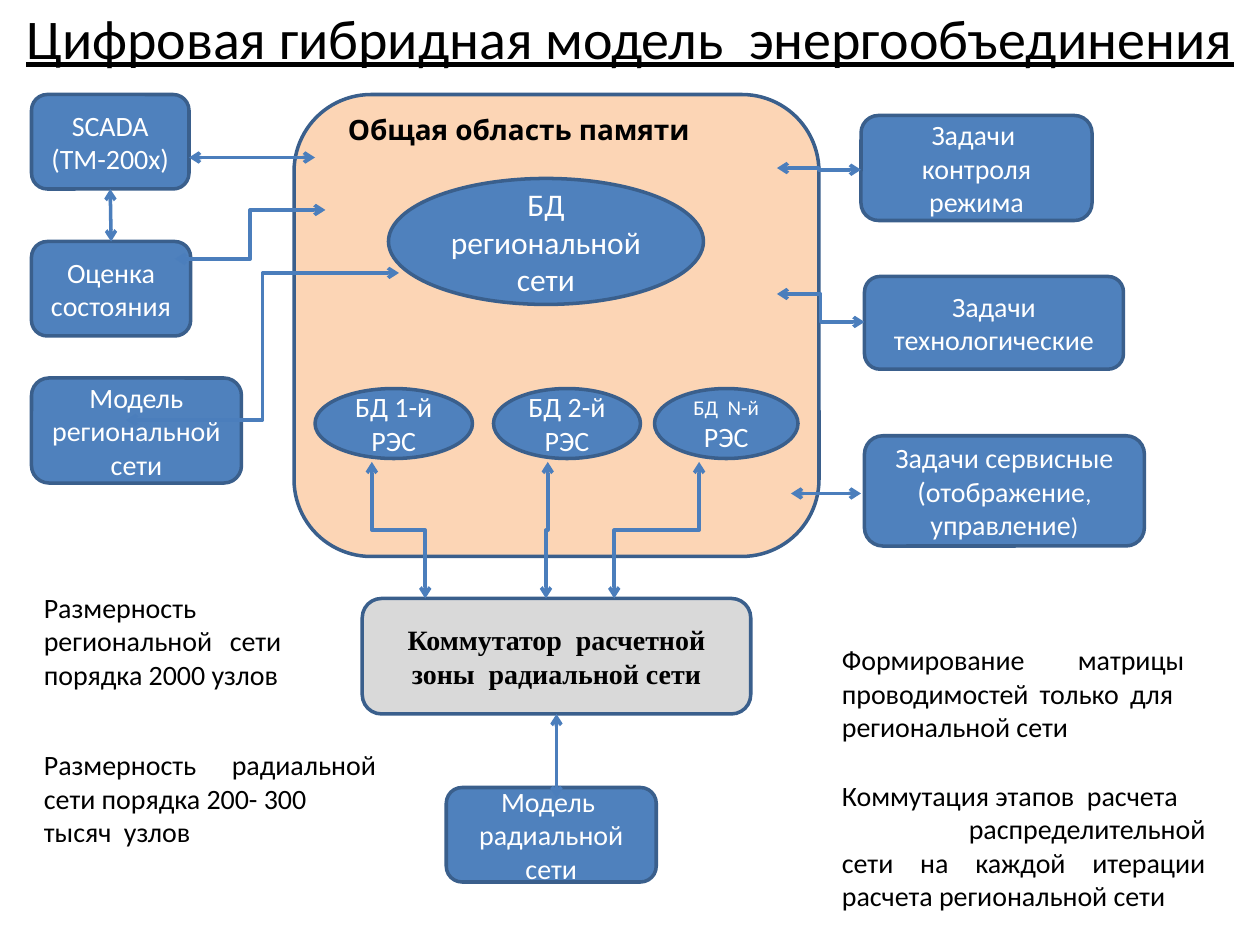
from lxml import etree
from pptx import Presentation
from pptx.dml.color import RGBColor
from pptx.enum.shapes import MSO_CONNECTOR as CONN, MSO_SHAPE as SHAPE
from pptx.enum.text import MSO_ANCHOR as ANCHOR, PP_ALIGN as ALIGN
from pptx.oxml.ns import qn
from pptx.util import Pt

COLORS = {
    "box": "4F81BD",
    "edge": "3A5F8C",
    "arrow": "4B7EBC",
    "memory": "FCD5B5",
    "switch": "D9D9D9",
    "light": "FFFFFF",
    "dark": "000000",
}


def rgb(name):
    return RGBColor.from_string(COLORS[name])


def write(sp, *paragraphs, size=16, font="Calibri", color="dark", bold=False,
          underline=False, aligns=(ALIGN.CENTER,), anchor=ANCHOR.MIDDLE, inset=7.2):
    tf = sp.text_frame
    tf.word_wrap = True
    tf.vertical_anchor = anchor
    tf.margin_left = tf.margin_right = Pt(inset)
    tf.margin_top = tf.margin_bottom = Pt(3.6)
    for i, runs in enumerate(paragraphs):
        p = tf.paragraphs[0] if i == 0 else tf.add_paragraph()
        p.alignment = aligns[min(i, len(aligns) - 1)]
        for text, run_size in [(runs, size)] if isinstance(runs, str) else runs:
            r = p.add_run()
            r.text = text
            r.font.size = Pt(run_size)
            r.font.name = font
            r.font.bold = bold
            r.font.underline = underline
            r.font.color.rgb = rgb(color)


def add_node(s, box, *paragraphs, kind=SHAPE.FLOWCHART_ALTERNATE_PROCESS,
             fill="box", color="light", **fmt):
    sp = s.shapes.add_shape(kind, *map(Pt, box))
    sp.shadow.inherit = False
    sp.fill.solid()
    sp.fill.fore_color.rgb = rgb(fill)
    sp.line.color.rgb = rgb("edge")
    sp.line.width = Pt(2)
    write(sp, *paragraphs, color=color, **fmt)
    return sp


def add_text(s, box, *paragraphs, **fmt):
    write(s.shapes.add_textbox(*map(Pt, box)), *paragraphs, **fmt)


def add_arrow(s, x1, y1, x2, y2, kind=CONN.STRAIGHT):
    c = s.shapes.add_connector(kind, Pt(x1), Pt(y1), Pt(x2), Pt(y2))
    c.line.color.rgb = rgb("arrow")
    c.line.width = Pt(2)
    ln = c.line._get_or_add_ln()
    for end in ("a:headEnd", "a:tailEnd"):
        etree.SubElement(ln, qn(end)).set("type", "arrow")
    etree.SubElement(c._element.spPr, qn("a:effectLst"))
    return c


def add_elbow_down(s, x1, y1, x2, y2):
    cx, cy = (x1 + x2) / 2, (y1 + y2) / 2
    half_length, half_shift = (y2 - y1) / 2, (x2 - x1) / 2
    c = add_arrow(s, cx - half_length, cy + half_shift,
                  cx + half_length, cy - half_shift, CONN.ELBOW)
    c._element.spPr.find(qn("a:xfrm")).set("rot", "5400000")


def add_title(s, box):
    sp = s.shapes.title
    sp.left, sp.top, sp.width, sp.height = map(Pt, box)
    write(sp, "Цифровая гибридная модель  энергообъединения",
          size=32, underline=True, inset=0)


def add_sources(s, x, y):
    scada = add_node(s, (x, y, 90, 54), "SCADA (ТМ-200х)")
    state = add_node(s, (x, y + 84, 91, 54), "Оценка состояния")
    add_node(s, (x, y + 162, 120, 60), "Модель региональной сети")
    link = add_arrow(s, x + 45, y + 54, x + 45, y + 84)
    link.begin_connect(scada, 2)
    link.end_connect(state, 0)
    add_arrow(s, x + 90, y + 36, x + 162, y + 36)
    add_arrow(s, x + 82, y + 94, x + 168, y + 66, CONN.ELBOW)
    add_arrow(s, x + 54, y + 186, x + 210, y + 102, CONN.ELBOW)


def add_tasks(s, x, y):
    add_node(s, (x, y, 132, 60), "Задачи  контроля режима")
    add_node(s, (x + 2, y + 92, 148, 53), "Задачи технологические")
    add_node(s, (x + 2, y + 183, 160, 63),
             [("Задачи сервисные (отображение", 16), (", ", 14),
              ("управление", 16), (")", 14)])
    add_arrow(s, x - 48, y + 30, x, y + 31, CONN.ELBOW)
    add_arrow(s, x - 48, y + 102, x + 2, y + 118, CONN.ELBOW)
    add_arrow(s, x - 40, y + 216, x, y + 216)


def add_memory(s, x, y, w, h):
    add_node(s, (x, y, w, h), fill="memory")
    add_text(s, (x + 16, y + 7, 225, 27), "Общая область памяти",
             font="Karla", bold=True, anchor=ANCHOR.TOP)
    oval = SHAPE.FLOWCHART_CONNECTOR
    add_node(s, (x + 54, y + 48, 180, 72), "БД региональной сети",
             kind=oval, size=18)
    districts = [
        (12, 90, "БД 1-й РЭС"),
        (114, 84, "БД 2-й РЭС"),
        (206, 82, [("БД  N-й ", 12), ("РЭС", 16)]),
    ]
    for dx, width, text in districts:
        add_node(s, (x + dx, y + 168, width, 40), text, kind=oval, inset=4)


def add_switch(s, x, y, w, h):
    switch = add_node(s, (x, y, w, h), "Коммутатор  расчетной зоны  радиальной сети",
                      fill="switch", color="dark", font="Times New Roman", bold=True)
    add_node(s, (x + 48, y + 108, 120, 54), "Модель  радиальной сети")
    for from_x, to_x in [(5.5, 36), (106, 105), (192.5, 144)]:
        add_elbow_down(s, x + from_x, y - 78, x + to_x, y)
    link = add_arrow(s, x + w / 2, y + h, x + w / 2, y + h + 48)
    link.begin_connect(switch, 2)


def add_notes(s, left, right, y):
    just = (ALIGN.JUSTIFY,)
    add_text(s, (left, y, 150, 48),
             "Размерность региональной сети порядка 2000 узлов", aligns=just)
    add_text(s, (left, y + 90, 204, 48),
             "Размерность радиальной сети порядка 200- 300", "тысяч  узлов", aligns=just)
    add_text(s, (right, y + 30, 210, 48),
             "Формирование матрицы проводимостей только для  региональной сети",
             aligns=just)
    add_text(s, (right, y + 108, 222, 66),
             "Коммутация этапов  расчета", "распределительной",
             "сети на каждой итерации расчета региональной сети",
             aligns=(ALIGN.LEFT, ALIGN.RIGHT, ALIGN.JUSTIFY))


def main():
    prs = Presentation()
    prs.slide_width, prs.slide_height = Pt(720), Pt(540)
    s = prs.slides.add_slide(prs.slide_layouts[5])
    add_title(s, (0, 0, 720, 42))
    add_memory(s, 168, 54, 300, 264)
    add_sources(s, 18, 54)
    add_tasks(s, 492, 66)
    add_switch(s, 207, 342, 222, 66)
    add_notes(s, 18, 474, 342)
    prs.save("out.pptx")


if __name__ == "__main__":
    main()
